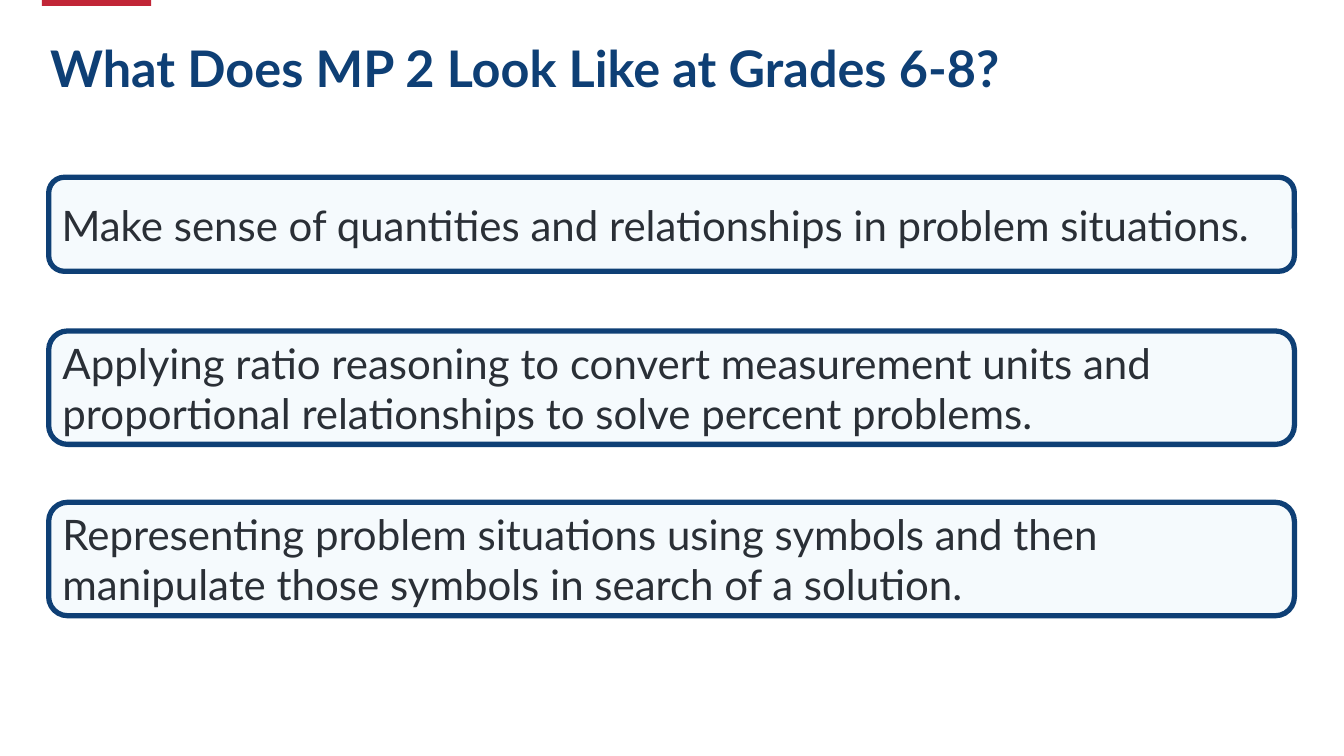
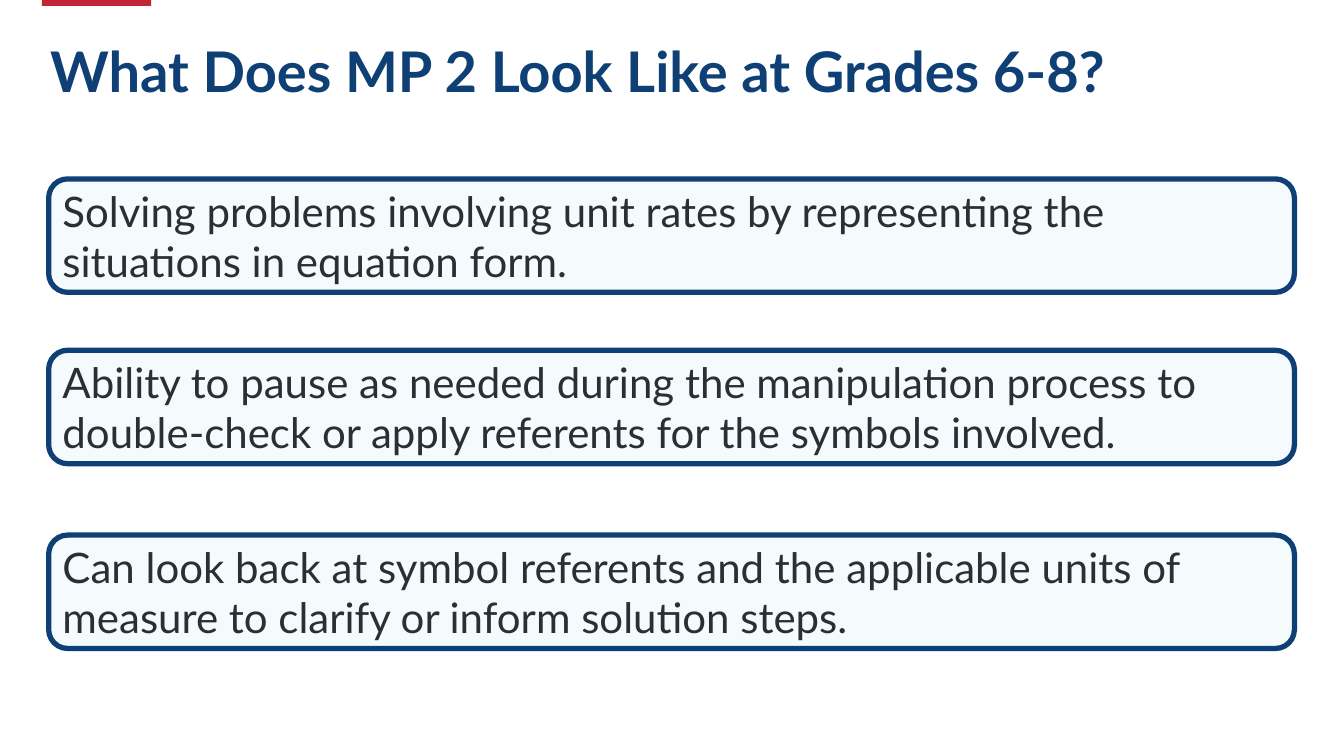
import dataclasses

import lxml.etree
import pptx
import pptx.dml.color
import pptx.enum.shapes
import pptx.enum.text
import pptx.oxml.ns
import pptx.presentation
import pptx.slide
import pptx.text.text
import pptx.util

Inches = pptx.util.Inches
Pt = pptx.util.Pt
RGBColor = pptx.dml.color.RGBColor
Shape = pptx.enum.shapes.MSO_SHAPE

NAVY = RGBColor(0x0E, 0x3F, 0x75)
RED = RGBColor(0xC1, 0x26, 0x37)
PALE_BLUE = RGBColor(0xE1, 0xF1, 0xF9)
CHARCOAL = RGBColor(0x2A, 0x2F, 0x36)

FONT = "Lato"
TITLE = "What Does MP 2 Look Like at Grades 6-8?"
CARD_LEFT = 0.58
CARD_WIDTH = 14.83
CARD_OPACITY = 30
CARD_TEXT_SIZE = 36


@dataclasses.dataclass(frozen=True)
class Card:
    text: str
    top: float
    height: float = 1.35


@dataclasses.dataclass(frozen=True)
class Page:
    title_size: float
    cards: tuple[Card, ...]


PAGES = (
    Page(43.2, (
        Card("Make sense of quantities and relationships in problem situations.", 2.11, 1.12),
        Card("Applying ratio reasoning to convert measurement units and "
             "proportional relationships to solve percent problems.", 3.94),
        Card("Representing problem situations using symbols and then "
             "manipulate those symbols in search of a solution.", 5.98),
    )),
    Page(48, (
        Card("Solving problems involving unit rates by representing the "
             "situations in equation form.", 2.13),
        Card("Ability to pause as needed during the manipulation process to "
             "double-check or apply referents for the symbols involved.", 4.17),
        Card("Can look back at symbol referents and the applicable units of "
             "measure to clarify or inform solution steps.", 6.37),
    )),
)


def write(frame: pptx.text.text.TextFrame, text: str, size: float,
          color: RGBColor, bold: bool = False) -> None:
    """Put one left-aligned, wrapping paragraph in the frame."""
    frame.word_wrap = True
    para = frame.paragraphs[0]
    para.alignment = pptx.enum.text.PP_ALIGN.LEFT
    span = para.add_run()
    span.text = text
    span.font.name = FONT
    span.font.size = Pt(size)
    span.font.bold = bold
    span.font.color.rgb = color


def add_red_tab(slide: pptx.slide.Slide) -> None:
    tab = slide.shapes.add_shape(
        Shape.RECTANGLE, Inches(0.5), Inches(0), Inches(1.3), Inches(0.07))
    tab.shadow.inherit = False
    tab.fill.solid()
    tab.fill.fore_color.rgb = RED
    tab.line.fill.background()


def add_title(slide: pptx.slide.Slide, size: float) -> None:
    box = slide.shapes.add_textbox(Inches(0.5), Inches(0.48), Inches(15), Inches(1.74))
    write(box.text_frame, TITLE, size, NAVY, bold=True)
    box.text_frame.paragraphs[0].line_spacing = 0.9


def add_card(slide: pptx.slide.Slide, card: Card) -> None:
    box = slide.shapes.add_shape(
        Shape.ROUNDED_RECTANGLE, Inches(CARD_LEFT), Inches(card.top),
        Inches(CARD_WIDTH), Inches(card.height))
    box.shadow.inherit = False
    box.fill.solid()
    box.fill.fore_color.rgb = PALE_BLUE
    qn = pptx.oxml.ns.qn
    fill_color = box.fill._xPr.find(qn("a:solidFill")).find(qn("a:srgbClr"))
    lxml.etree.SubElement(fill_color, qn("a:alpha"), val=str(CARD_OPACITY * 1000))
    box.line.color.rgb = NAVY
    box.line.width = Pt(4.5)
    box.text_frame.vertical_anchor = pptx.enum.text.MSO_ANCHOR.MIDDLE
    write(box.text_frame, card.text, CARD_TEXT_SIZE, CHARCOAL)


def add_page(deck: pptx.presentation.Presentation, page: Page) -> None:
    slide = deck.slides.add_slide(deck.slide_layouts[6])
    add_red_tab(slide)
    add_title(slide, page.title_size)
    for card in page.cards:
        add_card(slide, card)


def main() -> None:
    deck = pptx.Presentation()
    deck.slide_width = Inches(16)
    deck.slide_height = Inches(9)
    for page in PAGES:
        add_page(deck, page)
    deck.save("out.pptx")


if __name__ == "__main__":
    main()
